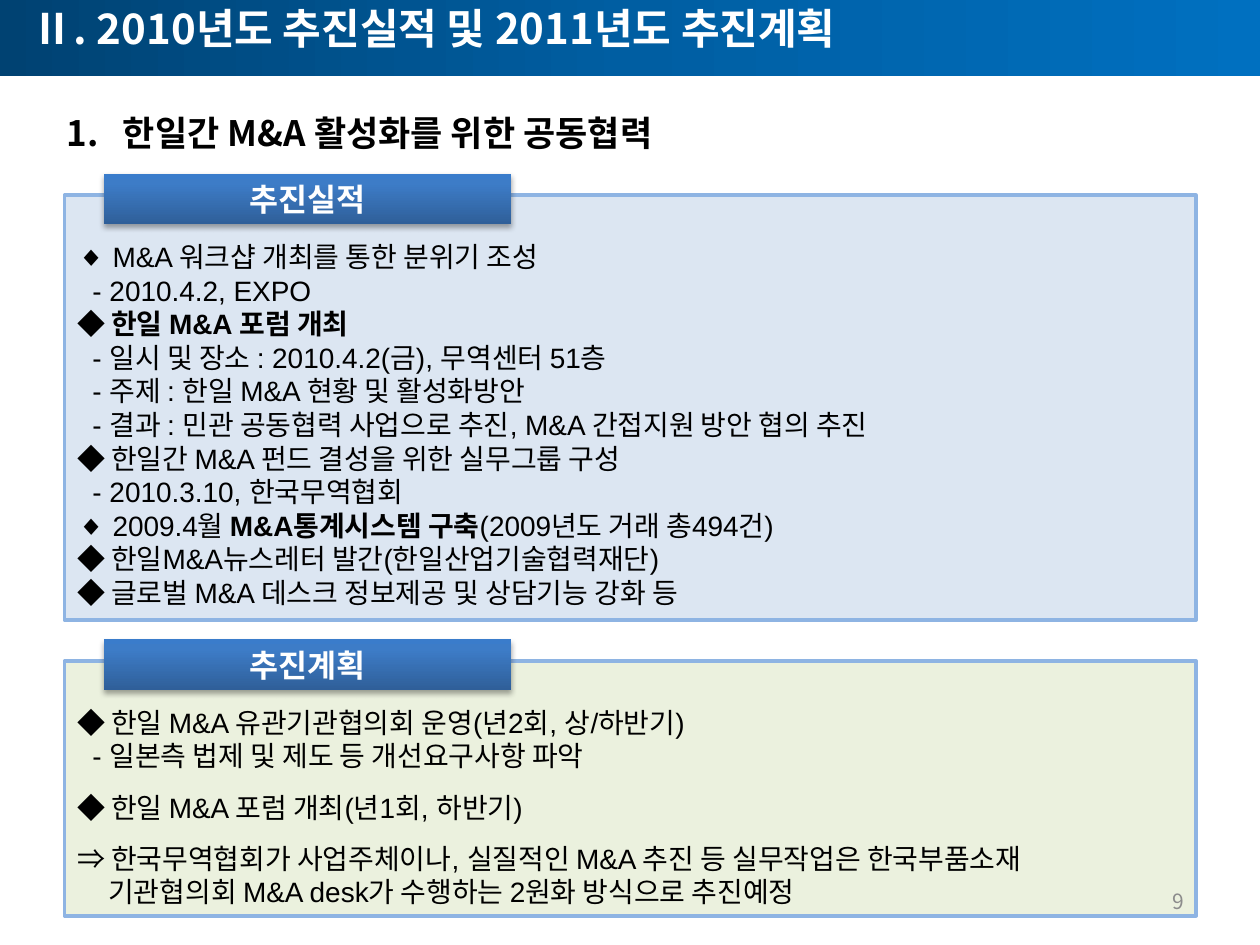
"""Build the slide on 2010 results and 2011 plans for Korea-Japan M&A cooperation."""
from copy import deepcopy

from lxml.etree import SubElement
from pptx import Presentation
from pptx.dml.color import RGBColor
from pptx.enum.shapes import MSO_SHAPE
from pptx.enum.text import MSO_ANCHOR, MSO_AUTO_SIZE, PP_ALIGN
from pptx.oxml.ns import qn
from pptx.util import Cm, Pt

COLORS = {
    "text": "000000", "white": "FFFFFF", "number": "8C8C8C", "border": "8EB4E3",
    "results": "DCE6F2", "plans": "EBF1DE", "shadow": "000000",
}
BAR_STOPS = [(0, "004272"), (0.5, "005EA2"), (1, "0070C0")]
LABEL_STOPS = [(0, "2F5F99"), (0.8, "3D7CC7"), (1, "3A7CCB")]
KOREAN = "Noto Sans CJK KR"
DASH_INDENT, WRAP_INDENT = Cm(0.31), Cm(0.63)

RESULTS = [
    ("**◆ **M&A 워크샵 개최를 통한 분위기 조성", 0, 0),
    ("- 2010.4.2, EXPO", DASH_INDENT, 0),
    ("**◆ 한일 M&A 포럼 개최**", 0, 0),
    ("- 일시 및 장소 : 2010.4.2(금), 무역센터 51층", DASH_INDENT, 0),
    ("- 주제 : 한일 M&A 현황 및 활성화방안", DASH_INDENT, 0),
    ("- 결과 : 민관 공동협력 사업으로 추진, M&A 간접지원 방안 협의 추진", DASH_INDENT, 0),
    ("◆ 한일간 M&A 펀드 결성을 위한 실무그룹 구성", 0, 0),
    ("- 2010.3.10, 한국무역협회", DASH_INDENT, 0),
    ("◆ 2009.4월 **M&A통계시스템 구축**(2009년도 거래 총494건)", 0, 0),
    ("◆ 한일M&A뉴스레터 발간(한일산업기술협력재단)", 0, 0),
    ("◆ 글로벌 M&A 데스크 정보제공 및 상담기능 강화 등", 0, 0),
]
PLANS = [
    ("◆ 한일 M&A 유관기관협의회 운영(년2회, 상/하반기)", 0, 0),
    ("- 일본측 법제 및 제도 등 개선요구사항 파악", DASH_INDENT, 0),
    ("◆ 한일 M&A 포럼 개최(년1회, 하반기)", 0, 10),
    ("⇒ 한국무역협회가 사업주체이나, 실질적인 M&A 추진 등 실무작업은 한국부품소재", 0, 10),
    ("기관협의회 M&A desk가 수행하는 2원화 방식으로 추진예정", WRAP_INDENT, 0),
]


def format_run(run, size, color, bold=False, font=KOREAN):
    run.font.size = Pt(size)
    run.font.bold = bold
    run.font.name = font
    run.font.color.rgb = RGBColor.from_string(COLORS[color])
    east_asian = run.font._element.find(qn("a:latin"))
    east_asian.addnext(deepcopy(east_asian))
    east_asian.getnext().tag = qn("a:ea")
    east_asian.getnext().set("typeface", KOREAN)


def fill_gradient(shape, stops, angle):
    shape.fill.gradient()
    shape.fill.gradient_angle = angle
    stop_list = shape._element.spPr.find(".//" + qn("a:gsLst"))
    stop_list.append(deepcopy(stop_list[-1]))
    for stop, (position, color) in zip(shape.fill.gradient_stops, stops):
        stop.position = position
        stop.color.rgb = RGBColor.from_string(color)


prs = Presentation()
prs.slide_width, prs.slide_height = Cm(25.4), Cm(19.05)
slide = prs.slides.add_slide(prs.slide_layouts[3])
title, results, plans = slide.placeholders

title.left, title.top, title.width, title.height = Cm(0), Cm(0), Cm(25.4), Cm(1.53)
fill_gradient(title, BAR_STOPS, 0)
title.text_frame.text = "Ⅱ. 2010년도 추진실적 및 2011년도 추진계획"
title.text_frame.auto_size = MSO_AUTO_SIZE.NONE
title.text_frame.vertical_anchor = MSO_ANCHOR.TOP
title.text_frame.margin_left = Cm(0.64)
title.text_frame.margin_top = Cm(0.05)
title.text_frame.paragraphs[0].alignment = PP_ALIGN.LEFT
format_run(title.text_frame.paragraphs[0].runs[0], 24, "white", True)

sections = [
    (results, "results", "추진실적", RESULTS, Cm(3.94), Cm(8.56)),
    (plans, "plans", "추진계획", PLANS, Cm(13.33), Cm(5.13)),
]
for panel, fill_color, label_text, lines, top, height in sections:
    panel.left, panel.top, panel.width, panel.height = Cm(1.3), top, Cm(22.81), height
    panel.fill.solid()
    panel.fill.fore_color.rgb = RGBColor.from_string(COLORS[fill_color])
    panel.line.color.rgb = RGBColor.from_string(COLORS["border"])
    panel.line.width = Pt(2.25)
    frame = panel.text_frame
    frame.auto_size = MSO_AUTO_SIZE.NONE
    frame.vertical_anchor = MSO_ANCHOR.TOP
    frame.margin_top = Cm(0.89)
    for index, (line, indent, gap) in enumerate(lines):
        paragraph = frame.add_paragraph() if index else frame.paragraphs[0]
        paragraph.space_before = Pt(gap)
        properties = paragraph._p.get_or_add_pPr()
        properties.set("marL", str(indent))
        properties.set("indent", "0")
        SubElement(properties, qn("a:buNone"))
        for part, words in enumerate(line.split("**")):
            if words:
                run = paragraph.add_run()
                run.text = words
                format_run(run, 16, "text", part % 2 == 1, "Arial")

    label = slide.shapes.add_shape(
        MSO_SHAPE.RECTANGLE, Cm(2.1), top - Cm(0.44), Cm(8.2), Cm(1.02))
    fill_gradient(label, LABEL_STOPS, 90)
    label.line.fill.background()
    label.shadow.inherit = False
    effects = label._element.spPr.find(qn("a:effectLst"))
    shadow = SubElement(effects, qn("a:outerShdw"), blurRad=str(Pt(3.1)),
                        dist=str(Pt(1.8)), dir="5400000", rotWithShape="0")
    shadow_color = SubElement(shadow, qn("a:srgbClr"), val=COLORS["shadow"])
    SubElement(shadow_color, qn("a:alpha"), val="35000")
    label.text_frame.text = label_text
    label.text_frame.paragraphs[0].alignment = PP_ALIGN.CENTER
    format_run(label.text_frame.paragraphs[0].runs[0], 18, "white", True)

heading = slide.shapes.add_textbox(Cm(1.09), Cm(2.13), Cm(19.61), Cm(1.12))
heading.text_frame.word_wrap = True
heading.text_frame.text = "1.\t한일간 M&A 활성화를 위한 공동협력"
heading_properties = heading.text_frame.paragraphs[0]._p.get_or_add_pPr()
heading_properties.set("marL", str(Cm(1.14)))
heading_properties.set("indent", str(-Cm(1.14)))
format_run(heading.text_frame.paragraphs[0].runs[0], 20, "text", True)

page_number = slide.shapes.add_textbox(Cm(18.21), Cm(17.65), Cm(5.92), Cm(1.02))
page_number.text_frame.word_wrap = True
page_number.text_frame.vertical_anchor = MSO_ANCHOR.MIDDLE
page_number.text_frame.text = "9"
page_number.text_frame.paragraphs[0].alignment = PP_ALIGN.RIGHT
format_run(page_number.text_frame.paragraphs[0].runs[0], 12, "number")

prs.save("out.pptx")
